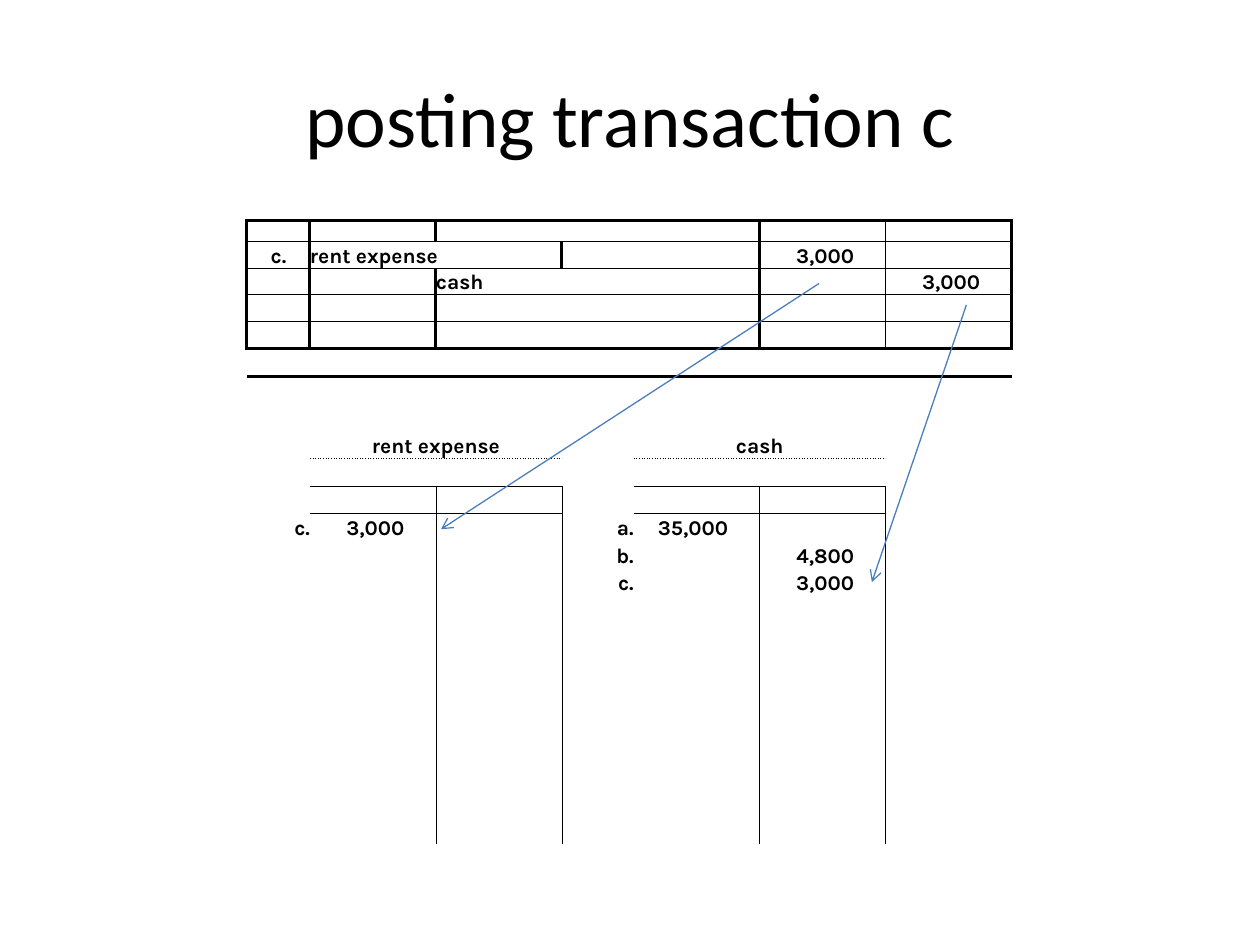
from collections import defaultdict
from dataclasses import dataclass

from lxml import etree
from pptx import Presentation
from pptx import util as u
from pptx.dml.color import RGBColor
from pptx.enum import shapes, text
from pptx.oxml import ns

SLIDE_W, SLIDE_H = u.Inches(10), u.Inches(7.5)
COLORS = {"ink": "000000", "arrow": "4B7EBC"}
TITLE_FONT, LEDGER_FONT = "Calibri", "Karla"
PLAIN_TABLE_STYLE = "{2D5ABB26-0587-4C30-8999-92F81FD0307C}"

COLUMNS = [0.5, 1, 1, 0.57, 1, 1, 1]
JOURNAL_ROWS = [0.17, 0.21, 0.21, 0.21, 0.22]
ROW_COUNT = 23
LEDGER_HEIGHT = 4.95
ACCOUNT_ROW = (LEDGER_HEIGHT - sum(JOURNAL_ROWS)) / (ROW_COUNT - len(JOURNAL_ROWS))
ROWS = JOURNAL_ROWS + [ACCOUNT_ROW] * (ROW_COUNT - len(JOURNAL_ROWS))
HEADING_ROW, FIRST_POSTING_ROW = 8, 11

LEFT, CENTER, RIGHT = text.PP_ALIGN.LEFT, text.PP_ALIGN.CENTER, text.PP_ALIGN.RIGHT
AMOUNT_INDENT = u.Inches(0.25)


@dataclass(frozen=True)
class Rule:
    points: float
    dash: str = "solid"


HEAVY, THIN, DOTTED = Rule(2), Rule(0.5), Rule(0.5, "sysDot")


@dataclass(frozen=True)
class Entry:
    row: int
    column: int
    wording: str
    align: text.PP_ALIGN = LEFT
    span: int = 1
    indent: int = 0


@dataclass(frozen=True)
class Account:
    name: str
    column: int
    postings: tuple  # (label, amount, 0 for debit or 1 for credit)


@dataclass(frozen=True)
class Arrow:
    """Start and end in percent of the slide's width and height."""
    start: tuple
    end: tuple


def amount(row: int, column: int, wording: str) -> Entry:
    return Entry(row, column, wording, RIGHT, indent=AMOUNT_INDENT)


JOURNAL = [
    Entry(1, 0, "c.", CENTER),
    Entry(1, 1, "rent expense", span=2),
    amount(1, 5, "3,000"),
    Entry(2, 2, "cash"),
    amount(2, 6, "3,000"),
]
ACCOUNTS = [
    Account("rent expense", 1, (("c.", "3,000", 0),)),
    Account("cash", 4, (("a.", "35,000", 0), ("b.", "4,800", 1), ("c.", "3,000", 1))),
]
ARROWS = [Arrow((65, 30), (35, 56)), Arrow((76.7, 32.27), (69.2, 61.6))]


def across(percent: float) -> int:
    return int(SLIDE_W * percent / 100)


def down(percent: float) -> int:
    return int(SLIDE_H * percent / 100)


def account_entries(account: Account) -> list[Entry]:
    entries = [Entry(HEADING_ROW, account.column, account.name, CENTER, span=2)]
    for row, (label, value, side) in enumerate(account.postings, FIRST_POSTING_ROW):
        entries.append(Entry(row, account.column - 1, label, RIGHT))
        entries.append(amount(row, account.column + side, value))
    return entries


def ledger_borders() -> dict:
    """Map each (row, column) to the rules on its sides."""
    borders = defaultdict(dict)

    def horizontal(line: int, columns: range, rule: Rule) -> None:
        for column in columns:
            borders[line - 1, column]["B"] = rule
            borders[line, column]["T"] = rule

    def vertical(line: int, rows: range, rule: Rule) -> None:
        for row in rows:
            borders[row, line - 1]["R"] = rule
            borders[row, line]["L"] = rule

    last_line = len(JOURNAL_ROWS)
    for line in range(last_line + 1):
        horizontal(line, range(len(COLUMNS)), HEAVY if line in (0, last_line) else THIN)
    for line, rule in {0: HEAVY, 1: HEAVY, 5: HEAVY, 6: THIN, 7: HEAVY}.items():
        vertical(line, range(last_line), rule)
    for account in ACCOUNTS:
        sides = range(account.column, account.column + 2)
        horizontal(HEADING_ROW + 1, sides, DOTTED)
        horizontal(HEADING_ROW + 2, sides, THIN)
        vertical(account.column + 1, range(HEADING_ROW + 2, ROW_COUNT), THIN)
    return borders


def format_cell(cell, rules: dict) -> None:
    cell.margin_left = cell.margin_right = cell.margin_top = cell.margin_bottom = 0
    cell.vertical_anchor = text.MSO_ANCHOR.BOTTOM
    properties = cell._tc.get_or_add_tcPr()
    for side in "LRTB":
        if side in rules:
            rule = rules[side]
            line = etree.SubElement(properties, ns.qn(f"a:ln{side}"), w=str(u.Pt(rule.points)))
            fill = etree.SubElement(line, ns.qn("a:solidFill"))
            etree.SubElement(fill, ns.qn("a:srgbClr"), val=COLORS["ink"])
            etree.SubElement(line, ns.qn("a:prstDash"), val=rule.dash)
    cell.fill.background()
    # A small end mark keeps empty rows from growing.
    etree.SubElement(cell.text_frame.paragraphs[0]._p, ns.qn("a:endParaRPr"), sz="800")


def write_entry(table, entry: Entry) -> None:
    cell = table.cell(entry.row, entry.column)
    if entry.span > 1:
        cell.merge(table.cell(entry.row, entry.column + entry.span - 1))
    cell.margin_right = entry.indent
    paragraph = cell.text_frame.paragraphs[0]
    paragraph.text = entry.wording
    paragraph.alignment = entry.align
    style_run(paragraph.runs[0], LEDGER_FONT, 12, True)


def style_run(run, font: str, size: float, bold: bool) -> None:
    run.font.name, run.font.size, run.font.bold = font, u.Pt(size), bold
    run.font.color.rgb = RGBColor.from_string(COLORS["ink"])


def draw_title(slide, wording: str) -> None:
    title = slide.shapes.title
    title.left, title.top = across(5), down(4)
    title.width, title.height = across(90), down(16.67)
    title.text_frame.text = wording
    title.text_frame.vertical_anchor = text.MSO_ANCHOR.MIDDLE
    paragraph = title.text_frame.paragraphs[0]
    paragraph.alignment = CENTER
    style_run(paragraph.runs[0], TITLE_FONT, 44, False)


def draw_ledger(slide) -> None:
    frame = slide.shapes.add_table(
        ROW_COUNT, len(COLUMNS), across(19.6), down(23.33),
        u.Inches(sum(COLUMNS)), u.Inches(LEDGER_HEIGHT))
    table = frame.table
    table.first_row = table.horz_banding = False
    table._tbl.tblPr.find(ns.qn("a:tableStyleId")).text = PLAIN_TABLE_STYLE
    for column, width in zip(table.columns, COLUMNS):
        column.width = u.Inches(width)
    for row, height in zip(table.rows, ROWS):
        row.height = u.Inches(height)
    borders = ledger_borders()
    for row in range(ROW_COUNT):
        for column in range(len(COLUMNS)):
            format_cell(table.cell(row, column), borders[row, column])
    for entry in JOURNAL + [e for account in ACCOUNTS for e in account_entries(account)]:
        write_entry(table, entry)


def draw_arrow(slide, arrow: Arrow) -> None:
    (x1, y1), (x2, y2) = arrow.start, arrow.end
    connector = slide.shapes.add_connector(
        shapes.MSO_CONNECTOR.STRAIGHT, across(x1), down(y1), across(x2), down(y2))
    connector.line.width = u.Pt(0.75)
    connector.line.color.rgb = RGBColor.from_string(COLORS["arrow"])
    etree.SubElement(connector.line._get_or_add_ln(), ns.qn("a:tailEnd"), type="arrow")
    etree.SubElement(connector._element.spPr, ns.qn("a:effectLst"))


def main() -> None:
    deck = Presentation()
    deck.slide_width, deck.slide_height = SLIDE_W, SLIDE_H
    slide = deck.slides.add_slide(deck.slide_layouts.get_by_name("Title Only"))
    draw_title(slide, "posting transaction c")
    draw_ledger(slide)
    for arrow in ARROWS:
        draw_arrow(slide, arrow)
    deck.save("out.pptx")


if __name__ == "__main__":
    main()
